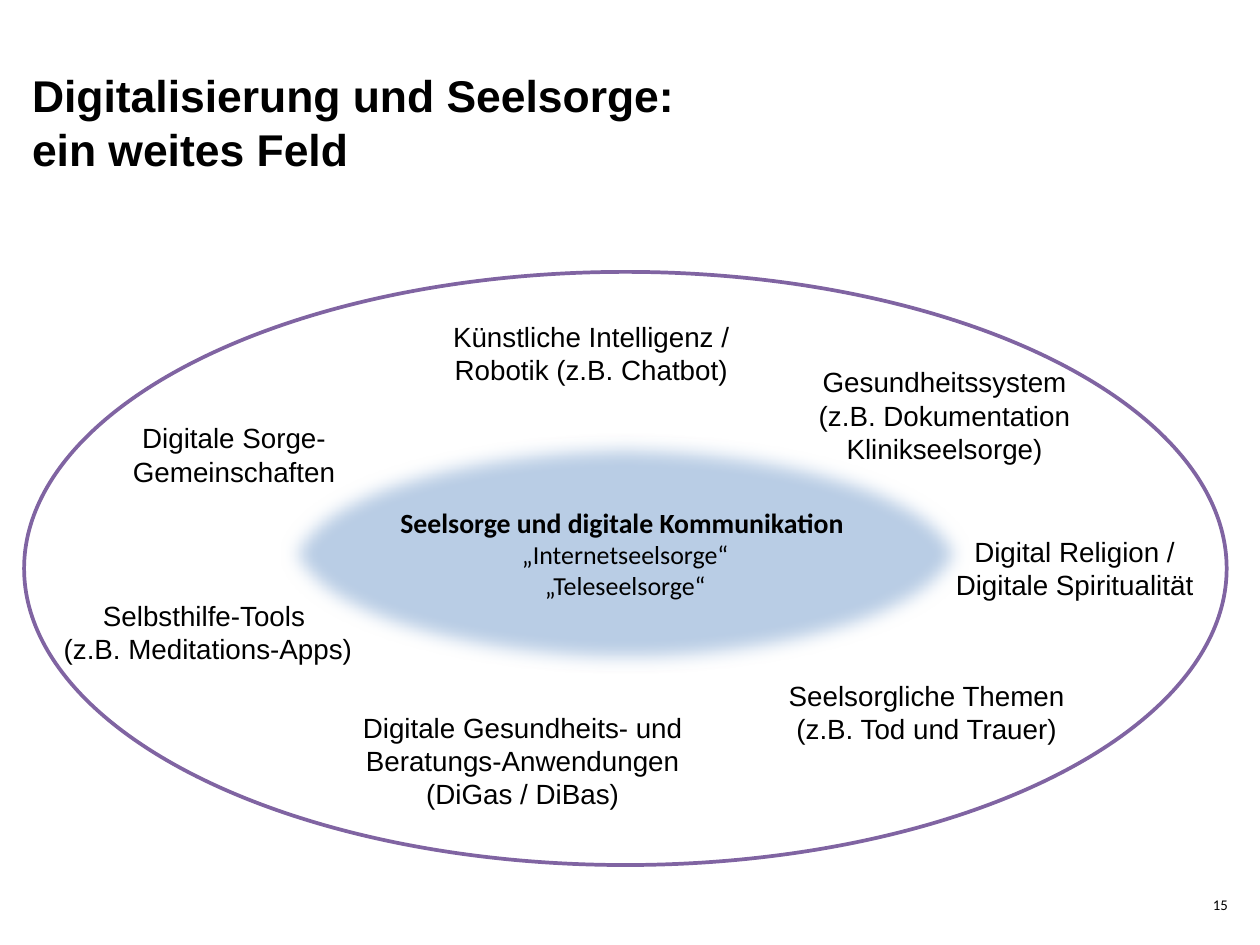
from dataclasses import dataclass

from lxml.etree import SubElement
from pptx import Presentation
from pptx.dml.color import RGBColor
from pptx.enum.shapes import MSO_SHAPE as Preset
from pptx.enum.text import MSO_ANCHOR as Anchor, MSO_AUTO_SIZE as AutoSize, PP_ALIGN as Align
from pptx.oxml.ns import qn
from pptx.util import Pt

BLACK, WHITE, PURPLE, LIGHT_BLUE = "000000", "FFFFFF", "8064A2", "B9CDE5"
TOPIC_SIZE = 15
TOPIC_HEIGHTS = {2: 43.9, 3: 61.9}  # by number of lines


@dataclass(frozen=True)
class Topic:
    text: str
    left: float
    top: float
    width: float
    lines: int = 2


TOPICS = [
    Topic("Künstliche Intelligenz / Robotik (z.B. Chatbot)", 228.2, 169.2, 182.2),
    Topic("Digitale Sorge-Gemeinschaften", 51.1, 223.9, 150.5),
    Topic("Seelsorgliche Themen (z.B. Tod und Trauer)", 402.5, 362.9, 195.8),
    Topic("Gesundheitssystem (z.B. Dokumentation Klinikseelsorge)", 433.4, 193.7, 153.4, 3),
    Topic("Digitale Gesundheits- und Beratungs-Anwendungen (DiGas / DiBas)",
          187.2, 380.2, 190.1, 3),
    Topic("Selbsthilfe-Tools \v(z.B. Meditations-Apps)", 17.3, 319.7, 190.1),
    Topic("Digital Religion /\vDigitale Spiritualität", 492.5, 285.1, 175.7),
]


def color(value: str) -> RGBColor:
    return RGBColor.from_string(value)


def format_paragraph(paragraph, size: float, font_name: str, align: Align,
                     bold: bool = False) -> None:
    paragraph.alignment = align
    for run in paragraph.runs:
        run.font.size = Pt(size)
        run.font.name = font_name
        run.font.bold = bold
        run.font.color.rgb = color(BLACK)


def add_text(slide, text: str, left: float, top: float, width: float, height: float,
             size: float, font_name: str = "Arial", align: Align = Align.LEFT,
             bold: bool = False):
    shape = slide.shapes.add_textbox(Pt(left), Pt(top), Pt(width), Pt(height))
    text_frame = shape.text_frame
    text_frame.word_wrap = True
    text_frame.text = text
    format_paragraph(text_frame.paragraphs[0], size, font_name, align, bold)
    return text_frame


def remove_margins(text_frame) -> None:
    text_frame.margin_left = text_frame.margin_right = 0
    text_frame.margin_top = text_frame.margin_bottom = 0


def add_ellipse(slide, left: float, top: float, width: float, height: float, fill: str):
    shape = slide.shapes.add_shape(Preset.OVAL, Pt(left), Pt(top), Pt(width), Pt(height))
    shape.shadow.inherit = False
    shape.fill.solid()
    shape.fill.fore_color.rgb = color(fill)
    shape.line.color.rgb = color(PURPLE)
    shape.line.width = Pt(2)
    return shape


def soften_edge(shape, radius: float) -> None:
    effects = shape.element.spPr.find(qn("a:effectLst"))
    SubElement(effects, qn("a:softEdge"), rad=str(Pt(radius)))


def add_core(slide) -> None:
    core = add_ellipse(slide, 150.5, 234.7, 374.4, 128.2, LIGHT_BLUE)
    soften_edge(core, 10)
    text_frame = core.text_frame
    text_frame.word_wrap = True
    text_frame.vertical_anchor = Anchor.MIDDLE
    text_frame.text = ("Seelsorge und digitale Kommunikation \n"
                       "„Internetseelsorge“\n„Teleseelsorge“")
    heading, *examples = text_frame.paragraphs
    format_paragraph(heading, 15, "Calibri", Align.CENTER, bold=True)
    for example in examples:
        format_paragraph(example, 14, "Calibri", Align.CENTER)


def main() -> None:
    presentation = Presentation()
    presentation.slide_width, presentation.slide_height = Pt(680.4), Pt(510.5)
    slide = presentation.slides.add_slide(presentation.slide_layouts[6])

    # Title and page number
    title = add_text(slide, "Digitalisierung und Seelsorge: \vein weites Feld",
                     17.3, 36.7, 473.8, 85, 24, bold=True)
    remove_margins(title)
    title.paragraphs[0].line_spacing = Pt(29)
    page_number = add_text(slide, "15", 487.4, 481.7, 175.7, 11.5, 8, "Calibri", Align.RIGHT)
    remove_margins(page_number)
    page_number.vertical_anchor = Anchor.BOTTOM

    # Wide field with its core
    add_ellipse(slide, 13, 146.9, 649.4, 320.4, WHITE)
    add_core(slide)

    # Topics around the core
    for topic in TOPICS:
        text_frame = add_text(slide, topic.text, topic.left, topic.top, topic.width,
                              TOPIC_HEIGHTS[topic.lines], TOPIC_SIZE, align=Align.CENTER)
        text_frame.auto_size = AutoSize.SHAPE_TO_FIT_TEXT

    presentation.save("out.pptx")


if __name__ == "__main__":
    main()
